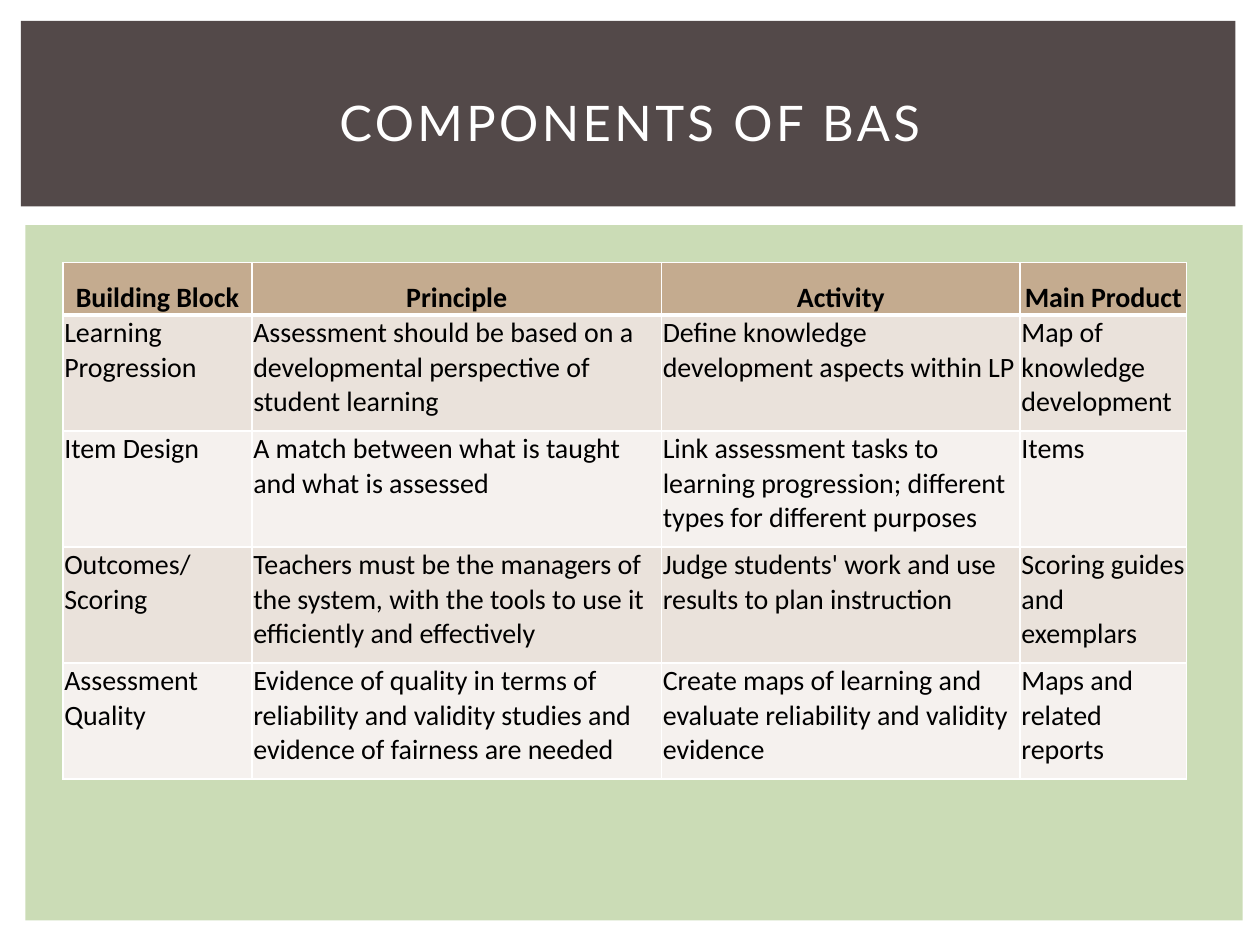
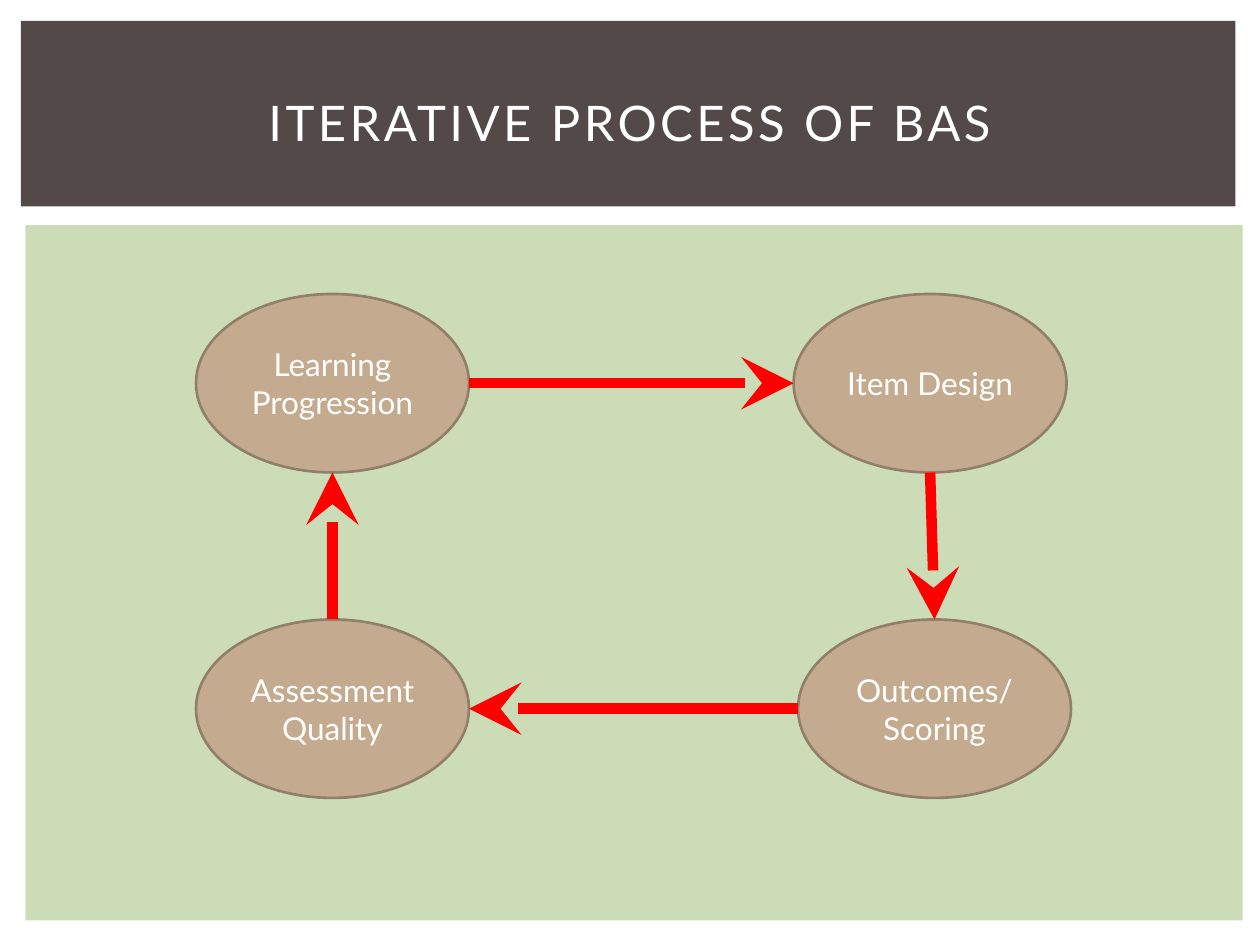
from lxml import etree
from pptx import Presentation
from pptx.dml.color import RGBColor
from pptx.enum.shapes import MSO_CONNECTOR, MSO_SHAPE
from pptx.enum.text import MSO_ANCHOR, PP_ALIGN
from pptx.oxml.ns import qn
from pptx.util import Pt

RECTANGLE, OVAL = MSO_SHAPE.RECTANGLE, MSO_SHAPE.OVAL
STRAIGHT = MSO_CONNECTOR.STRAIGHT
LEFT, CENTER = PP_ALIGN.LEFT, PP_ALIGN.CENTER
TOP, MIDDLE, BOTTOM = MSO_ANCHOR.TOP, MSO_ANCHOR.MIDDLE, MSO_ANCHOR.BOTTOM

WHITE = RGBColor(0xFF, 0xFF, 0xFF)
BLACK = RGBColor(0x00, 0x00, 0x00)
GREEN = RGBColor(0xCB, 0xDC, 0xB6)
BROWN = RGBColor(0x53, 0x49, 0x49)
TAN = RGBColor(0xC4, 0xAB, 0x8F)
TAN_EDGE = RGBColor(0x91, 0x7F, 0x6A)
BAND_DARK = RGBColor(0xEA, 0xE2, 0xDB)
BAND_LIGHT = RGBColor(0xF5, 0xF1, 0xEE)
RED = RGBColor(0xFF, 0x00, 0x00)
TITLE_FONT, TABLE_FONT = "Lato", "Calibri"


def add_panel(slide, kind, left, top, width, height, color):
    """Add a plain filled shape without outline or shadow."""
    panel = slide.shapes.add_shape(kind, Pt(left), Pt(top), Pt(width), Pt(height))
    panel.shadow.inherit = False
    panel.fill.solid()
    panel.fill.fore_color.rgb = color
    panel.line.fill.background()
    return panel


def write_lines(frame, text, font, size, color, align, bold=False):
    """Fill a text frame with one paragraph per line of text."""
    for index, line in enumerate(text.split("\n")):
        paragraph = frame.add_paragraph() if index else frame.paragraphs[0]
        paragraph.alignment = align
        run = paragraph.add_run()
        run.text = line
        run.font.name = font
        run.font.size = Pt(size)
        run.font.bold = bold
        run.font.color.rgb = color
    return run


prs = Presentation()
prs.slide_width, prs.slide_height = Pt(720), Pt(540)

# Shared background panel, title band and title
slides = []
for title in ("COMPONENTS OF BAS", "ITERATIVE PROCESS OF BAS"):
    slide = prs.slides.add_slide(prs.slide_layouts[6])
    add_panel(slide, RECTANGLE, 14.6, 128.7, 695.5, 397.3, GREEN)
    add_panel(slide, RECTANGLE, 12, 12, 694, 106, BROWN)
    title_box = slide.shapes.add_textbox(Pt(30), Pt(28), Pt(660), Pt(83))
    title_box.text_frame.word_wrap = True
    title_box.text_frame.vertical_anchor = MIDDLE
    title_run = write_lines(title_box.text_frame, title, TITLE_FONT, 28, WHITE, CENTER)
    title_run.font._element.set("spc", "200")
    slides.append(slide)
components_slide, process_slide = slides

# Components table
COMPONENTS = [
    ("Building Block", "Principle", "Activity", "Main Product"),
    ("Learning Progression",
     "Assessment should be based on a developmental perspective of student learning",
     "Define knowledge development aspects within LP",
     "Map of knowledge development"),
    ("Item Design",
     "A match between what is taught and what is assessed",
     "Link assessment tasks to learning progression; different types for different purposes",
     "Items"),
    ("Outcomes/\nScoring",
     "Teachers must be the managers of the system, with the tools to use it\n"
     "efficiently and effectively",
     "Judge students' work and use results to plan instruction",
     "Scoring guides and exemplars"),
    ("Assessment Quality",
     "Evidence of quality in terms of reliability and validity studies and "
     "evidence of fairness are needed",
     "Create maps of learning and evaluate reliability and validity evidence",
     "Maps and related reports"),
]
COLUMN_WIDTHS = (108, 234, 205, 95)
HEADER_HEIGHT, ROW_HEIGHT = 30, 66.3

components = components_slide.shapes.add_table(
    len(COMPONENTS), len(COLUMN_WIDTHS), Pt(36), Pt(150),
    Pt(sum(COLUMN_WIDTHS)), Pt(HEADER_HEIGHT + 4 * ROW_HEIGHT)).table
for column, width in zip(components.columns, COLUMN_WIDTHS):
    column.width = Pt(width)

for row_index, entries in enumerate(COMPONENTS):
    is_header = row_index == 0
    components.rows[row_index].height = Pt(HEADER_HEIGHT if is_header else ROW_HEIGHT)
    band = TAN if is_header else (BAND_LIGHT, BAND_DARK)[row_index % 2]
    for column_index, entry in enumerate(entries):
        cell = components.cell(row_index, column_index)
        cell.margin_left = cell.margin_right = cell.margin_top = Pt(0.75)
        cell.margin_bottom = 0
        cell.vertical_anchor = BOTTOM if is_header else TOP
        write_lines(cell.text_frame, entry, TABLE_FONT, 16, BLACK,
                    CENTER if is_header else LEFT, is_header)
        cell_properties = cell._tc.get_or_add_tcPr()
        for side in ("lnL", "lnR", "lnT", "lnB"):
            thick = (is_header and side == "lnB") or (row_index == 1 and side == "lnT")
            border = etree.SubElement(cell_properties, qn(f"a:{side}"),
                                      w=str(Pt(3 if thick else 1)))
            border_fill = etree.SubElement(border, qn("a:solidFill"))
            etree.SubElement(border_fill, qn("a:srgbClr"), val=str(WHITE))
        cell.fill.solid()
        cell.fill.fore_color.rgb = band

# Process cycle
STAGE_WIDTH, STAGE_HEIGHT = 156, 102
LEFT_X, DESIGN_X, SCORING_X = 112, 453.5, 456
UPPER_Y, LOWER_Y = 168, 354
STAGES = [
    ("Learning Progression", LEFT_X, UPPER_Y),
    ("Item Design", DESIGN_X, UPPER_Y),
    ("Outcomes/Scoring", SCORING_X, LOWER_Y),
    ("Assessment Quality", LEFT_X, LOWER_Y),
]
for name, left, top in STAGES:
    stage = add_panel(process_slide, OVAL, left, top, STAGE_WIDTH, STAGE_HEIGHT, TAN)
    stage.line.color.rgb = TAN_EDGE
    stage.line.width = Pt(1.5)
    stage.text_frame.word_wrap = True
    stage.text_frame.vertical_anchor = MIDDLE
    write_lines(stage.text_frame, name, TITLE_FONT, 18, WHITE, CENTER)

half_width, half_height = STAGE_WIDTH / 2, STAGE_HEIGHT / 2
left_edge = LEFT_X + STAGE_WIDTH
upper_middle, lower_middle = UPPER_Y + half_height, LOWER_Y + half_height
upper_bottom = UPPER_Y + STAGE_HEIGHT
STEPS = [
    (left_edge, upper_middle, DESIGN_X, upper_middle),
    (DESIGN_X + half_width, upper_bottom, SCORING_X + half_width, LOWER_Y),
    (SCORING_X, lower_middle, left_edge, lower_middle),
    (LEFT_X + half_width, LOWER_Y, LEFT_X + half_width, upper_bottom),
]
for step in STEPS:
    arrow = process_slide.shapes.add_connector(STRAIGHT, *(Pt(value) for value in step))
    arrow.line.color.rgb = RED
    arrow.line.width = Pt(6)
    etree.SubElement(arrow.line._get_or_add_ln(), qn("a:tailEnd"),
                     type="stealth", w="lg", len="lg")
    etree.SubElement(arrow._element.spPr, qn("a:effectLst"))

prs.save("out.pptx")
